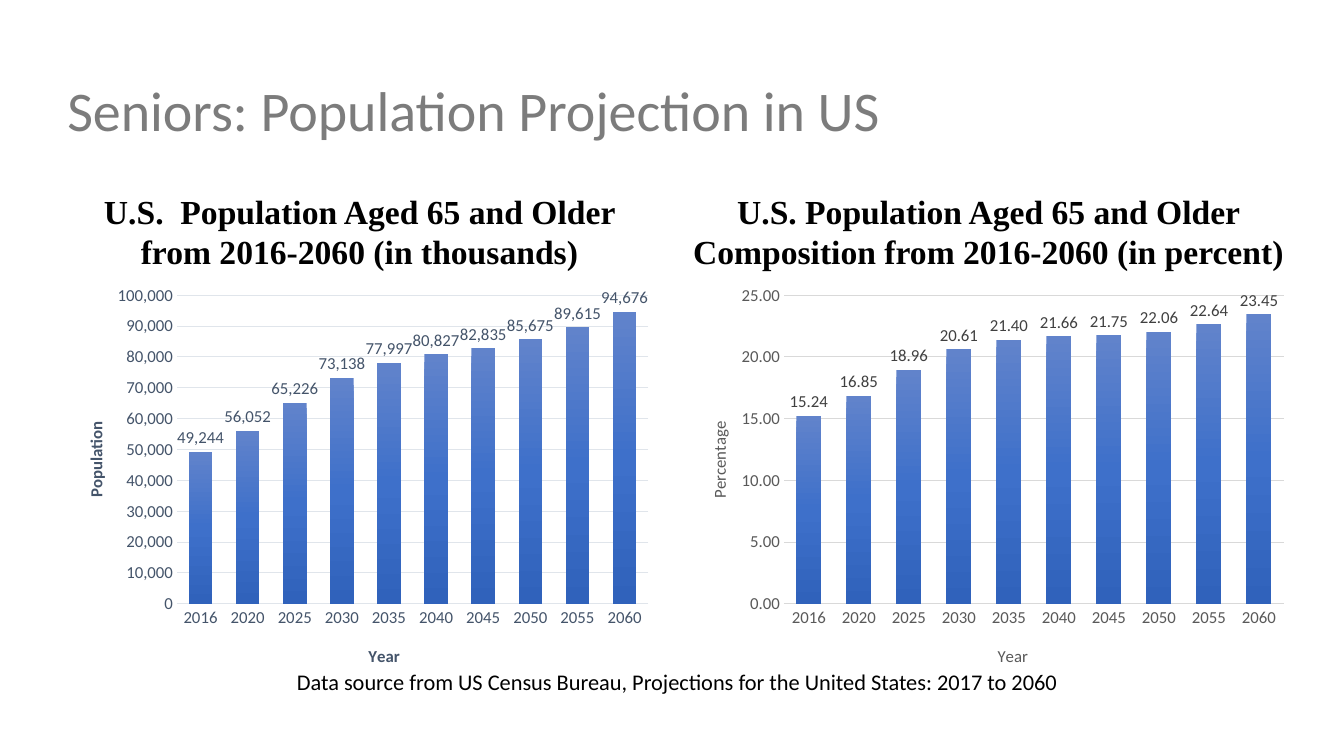
from pptx import Presentation
from pptx.chart.data import CategoryChartData
from pptx.dml.color import RGBColor
from pptx.enum import chart as kinds, text
from pptx.oxml import parse_xml
from pptx.oxml.ns import nsdecls, qn
from pptx.util import Pt

BLACK = RGBColor(0, 0, 0)
GRAY = RGBColor(0x7C, 0x7C, 0x7C)
SLATE = RGBColor(0x44, 0x54, 0x6A)
MIST = RGBColor(0xE0, 0xE5, 0xEB)
DIM = RGBColor(0x59, 0x59, 0x59)
DARK = RGBColor(0x40, 0x40, 0x40)
PALE = RGBColor(0xD9, 0xD9, 0xD9)
BLUES = ((0, RGBColor(0x61, 0x83, 0xCB)),
         (50, RGBColor(0x3E, 0x70, 0xCA)),
         (100, RGBColor(0x30, 0x62, 0xBB)))

SANS, SERIF = "Calibri", "Times New Roman"
YEARS = ["2016"] + [str(year) for year in range(2020, 2061, 5)]
PEOPLE = (49244, 56052, 65226, 73138, 77997, 80827, 82835, 85675, 89615, 94676)
SHARES = (15.24, 16.85, 18.96, 20.61, 21.4, 21.66, 21.75, 22.06, 22.64, 23.45)
LEFT, RIGHT = (41, 431.5), (486, 440)
WIDE = (41, 885.6)


def style(font, size, color, face=SANS, bold=False):
    font.size, font.name, font.bold = Pt(size), face, bold
    font.color.rgb = color


def add_text(slide, words, span, top, height, size, color=BLACK, face=SANS,
             bold=False, align=text.PP_ALIGN.CENTER,
             anchor=text.MSO_ANCHOR.TOP, spacing=1.0):
    box = slide.shapes.add_textbox(Pt(span[0]), Pt(top), Pt(span[1]), Pt(height))
    frame = box.text_frame
    frame.word_wrap = True
    frame.vertical_anchor = anchor
    para = frame.paragraphs[0]
    para.alignment, para.line_spacing = align, spacing
    run = para.add_run()
    run.text = words
    style(run.font, size, color, face, bold)


def place(node, index, **spots):
    for old in node.findall(qn("c:layout")):
        node.remove(old)
    target = '<c:layoutTarget val="inner"/>' if "w" in spots else ""
    modes = '<c:xMode val="edge"/><c:yMode val="edge"/>'
    sizes = "".join(f'<c:{key} val="{spot}"/>' for key, spot in spots.items())
    node.insert(index, parse_xml(
        f'<c:layout {nsdecls("c")}><c:manualLayout>{target}{modes}{sizes}'
        '</c:manualLayout></c:layout>'))


def shade(series):
    stops = "".join(f'<a:gs pos="{pos * 1000}"><a:srgbClr val="{color}"/></a:gs>'
                    for pos, color in BLUES)
    series._element.get_or_add_spPr().append(parse_xml(
        f'<a:gradFill {nsdecls("a")} rotWithShape="1"><a:gsLst>{stops}</a:gsLst>'
        '<a:lin ang="5400000" scaled="0"/></a:gradFill>'))


def set_axis(axis, name, color, bold, x, y):
    axis.major_tick_mark = axis.minor_tick_mark = kinds.XL_TICK_MARK.NONE
    style(axis.tick_labels.font, 12, color)
    title = axis.axis_title
    title.text_frame.text = name
    style(title.text_frame.paragraphs[0].runs[0].font, 12, color, bold=bold)
    place(title._element, 1, x=x, y=y)


def add_bars(slide, span, name, values, top, step, form, ink, tint, rule,
             weight, bold, x, w):
    data = CategoryChartData()
    data.categories = YEARS
    data.add_series("Series 1", values)
    chart = slide.shapes.add_chart(
        kinds.XL_CHART_TYPE.COLUMN_CLUSTERED, Pt(span[0]), Pt(197.3),
        Pt(span[1]), Pt(290), data).chart
    chart.has_legend = chart.has_title = False
    style(chart.font, 10, BLACK)
    place(chart._chartSpace.chart.plotArea, 0, x=x, y=0.047, w=w, h=0.76)

    years, scale = chart.category_axis, chart.value_axis
    set_axis(years, "Year", ink, bold, 0.51, 0.9)
    set_axis(scale, name, ink, bold, 0.04, 0.35)
    scale.minimum_scale, scale.maximum_scale, scale.major_unit = 0, top, step
    scale.tick_labels.number_format = form
    scale.tick_labels.number_format_is_linked = False
    scale.format.line.fill.background()
    for line, width in ((years.format.line, weight),
                        (scale.major_gridlines.format.line, 0.75)):
        line.color.rgb, line.width = rule, Pt(width)

    plot = chart.plots[0]
    plot.gap_width, plot.overlap, plot.vary_by_categories = 100, -24, False
    shade(plot.series[0])
    plot.has_data_labels = True
    labels = plot.data_labels
    labels.show_value = True
    labels.position = kinds.XL_LABEL_POSITION.OUTSIDE_END
    labels.number_format, labels.number_format_is_linked = form, False
    style(labels.font, 12, tint)


def main():
    deck = Presentation()
    deck.slide_width, deck.slide_height = Pt(960), Pt(540)
    slide = deck.slides.add_slide(deck.slide_layouts[6])
    add_text(slide, "Seniors: Population Projection in US", WIDE, 28.8, 104.4,
             40, GRAY, align=text.PP_ALIGN.LEFT,
             anchor=text.MSO_ANCHOR.MIDDLE, spacing=0.9)
    for span, words in (
            (LEFT, "U.S.  Population Aged 65 and Older from 2016-2060 (in thousands)"),
            (RIGHT, "U.S. Population Aged 65 and Older Composition from 2016-2060 (in percent)")):
        add_text(slide, words, span, 132.5, 64.8, 24, face=SERIF, bold=True,
                 anchor=text.MSO_ANCHOR.BOTTOM)
    add_bars(slide, LEFT, "Population", PEOPLE, 100000, 10000, "#,##0",
             SLATE, SLATE, MIST, 0.75, True, 0.198, 0.78)
    add_bars(slide, RIGHT, "Percentage", SHARES, 25, 5, "0.00",
             DIM, DARK, PALE, 1, False, 0.168, 0.812)
    add_text(slide, "Data source from US Census Bureau, Projections for the "
             "United States: 2017 to 2060", WIDE, 473.8, 26.6, 16)
    deck.save("out.pptx")


if __name__ == "__main__":
    main()
